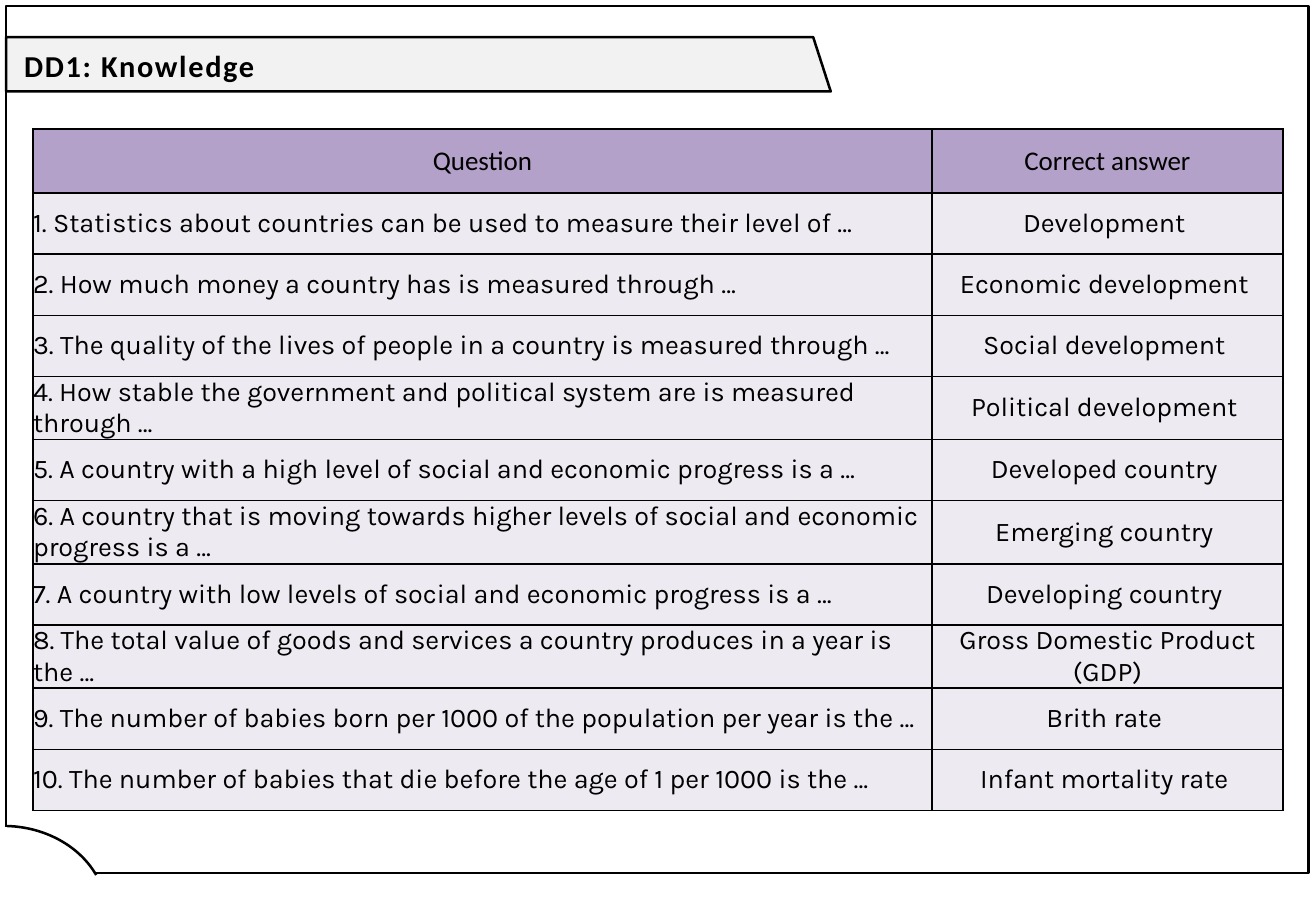
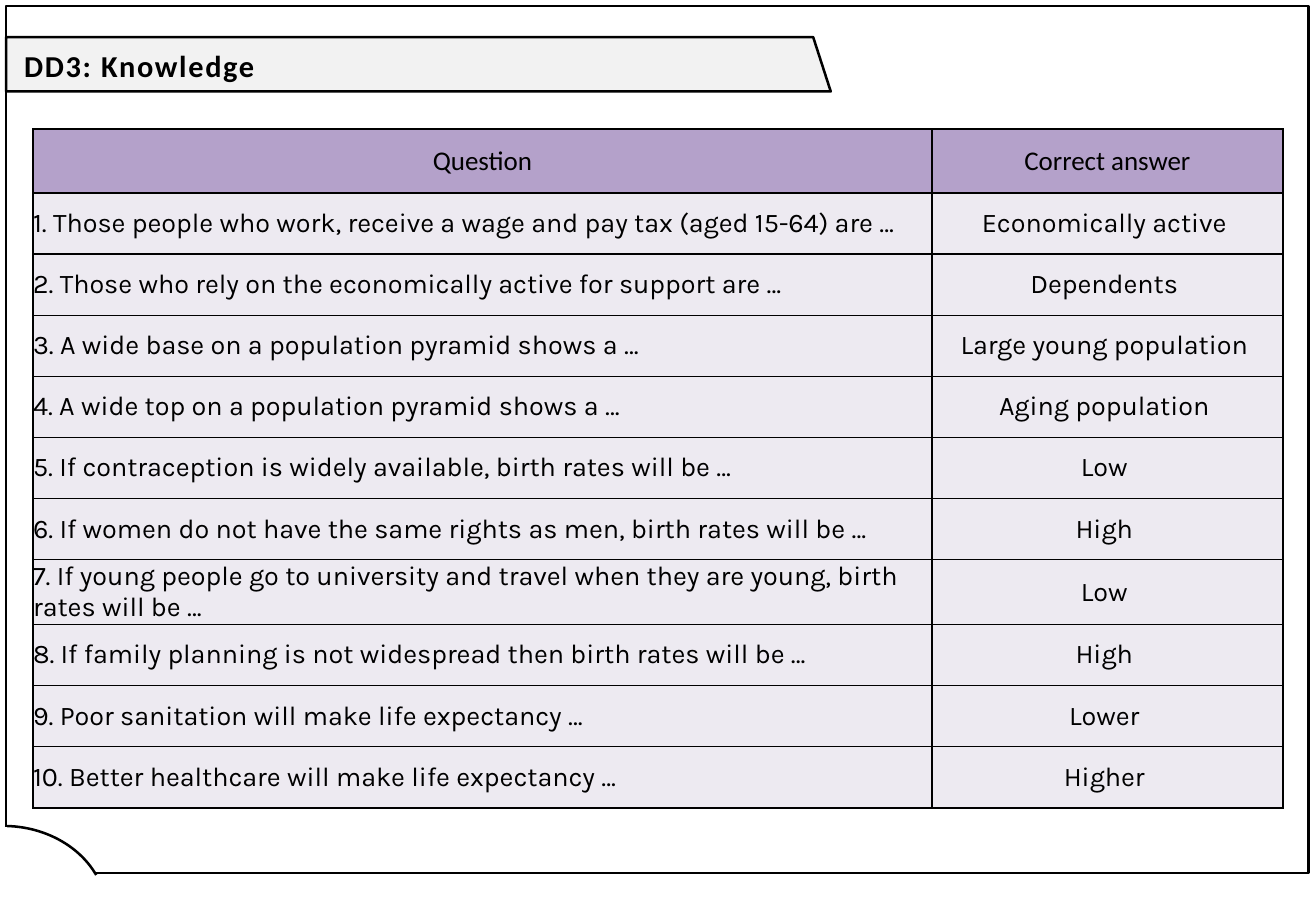
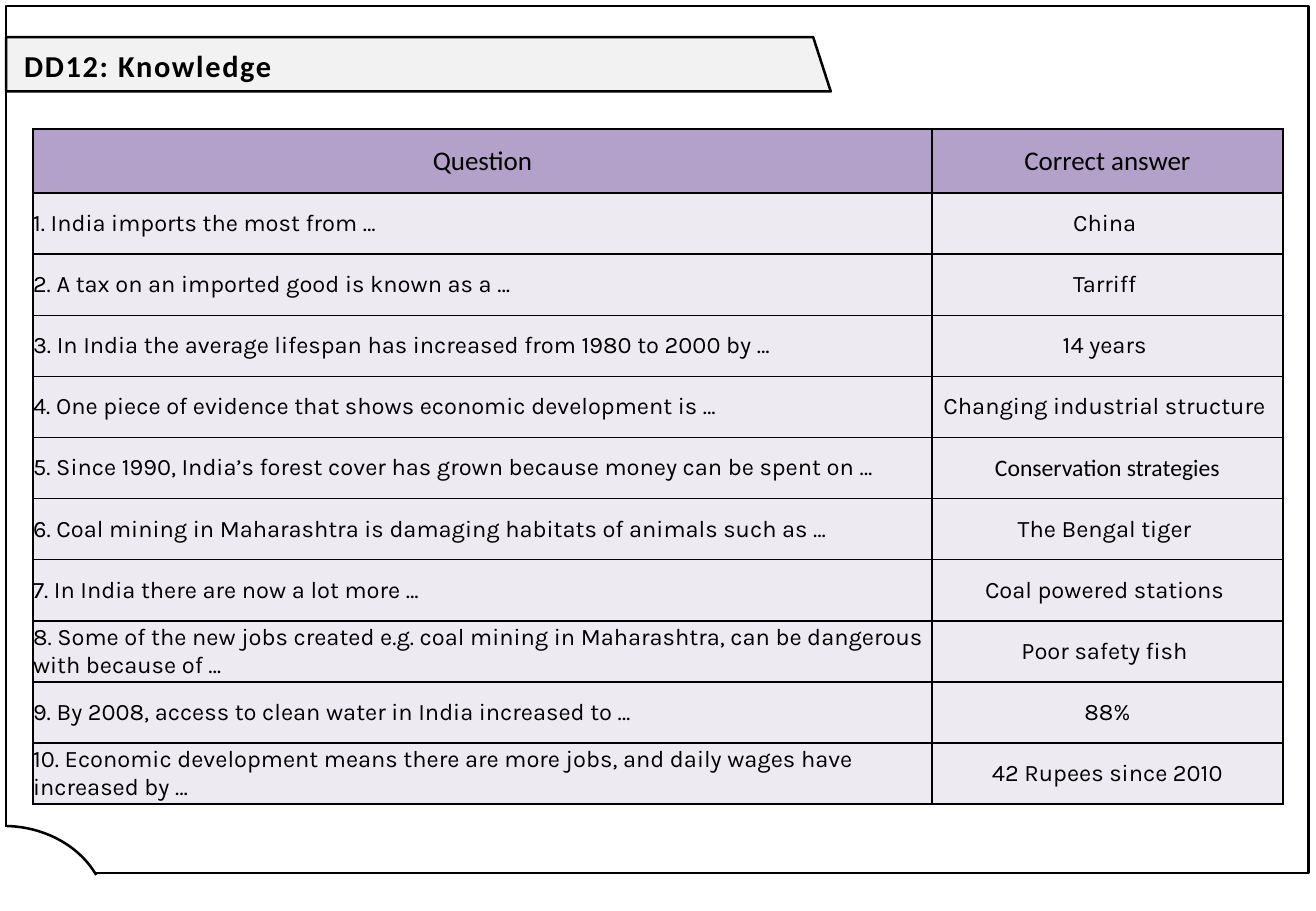
from dataclasses import dataclass

from lxml.etree import SubElement
from pptx import Presentation
from pptx.dml.color import RGBColor
from pptx.enum.shapes import MSO_SHAPE as Preset
from pptx.enum.text import MSO_ANCHOR as Anchor, PP_ALIGN as Align
from pptx.oxml.ns import qn
from pptx.util import Pt


@dataclass(frozen=True)
class Theme:
    ink: str = "000000"
    paper: str = "FFFFFF"
    band: str = "F2F2F2"
    header: str = "B4A1CA"
    row: str = "EDEAF1"
    heading_font: str = "Calibri"
    body_font: str = "Karla"
    title_size: int = 18
    header_size: int = 16
    outline: float = 1.5
    grid: float = 1


THEME = Theme()
HEADERS = ("Question", "Correct answer")
COLUMN_WIDTHS = (532.8, 208.1)
HEADER_HEIGHT, ROW_HEIGHT = 37.9, 36.25
TABLE_LEFT, TABLE_TOP = 19.6, 76.5
BAND_POINTS = [(3.6, 22), (482, 22), (492.4, 54.2), (3.6, 54.2)]

QUIZZES = [
    ("DD1: Knowledge", 16, [
        ("Statistics about countries can be used to measure their level of …", "Development "),
        ("How much money a country has is measured through …", "Economic development "),
        ("The quality of the lives of people in a country is measured through …", "Social development "),
        ("How stable the government and political system are is measured through …", "Political development "),
        ("A country with a high level of social and economic progress is a …", "Developed country "),
        ("A country that is moving towards higher levels of social and economic progress is a …", "Emerging country "),
        ("A country with low levels of social and economic progress is a …", "Developing country "),
        ("The total value of goods and services a country produces in a year is the …", "Gross Domestic Product (GDP)"),
        ("The number of babies born per 1000 of the population per year is the …", "Brith rate "),
        ("The number of babies that die before the age of 1 per 1000 is the …", "Infant mortality rate "),
    ]),
    ("DD3: Knowledge", 16, [
        ("Those people who work, receive a wage and pay tax (aged 15-64) are …", "Economically active "),
        ("Those who rely on the economically active for support are …", "Dependents "),
        ("A wide base on a population pyramid shows a …", "Large young population "),
        ("A wide top on a population pyramid shows a …", "Aging population "),
        ("If contraception is widely available, birth rates will be …", "Low "),
        ("If women do not have the same rights as men, birth rates will be …", "High "),
        ("If young people go to university and travel when they are young, birth rates will be …", "Low "),
        ("If family planning is not widespread then birth rates will be …", "High "),
        ("Poor sanitation will make life expectancy …", "Lower "),
        ("Better healthcare will make life expectancy …", "Higher "),
    ]),
    ("DD12: Knowledge", 14, [
        ("India imports the most from …", "China "),
        ("A tax on an imported good is known as a …", "Tarriff "),
        ("In India the average lifespan has increased from 1980 to 2000 by …", "14 years "),
        ("One piece of evidence that shows economic development is …", "Changing industrial structure "),
        ("Since 1990, India’s forest cover has grown because money can be spent on …", "Conservation strategies",
         THEME.heading_font),
        ("Coal mining in Maharashtra is damaging habitats of animals such as …", "The Bengal tiger "),
        ("In India there are now a lot more …", "Coal powered stations "),
        ("Some of the new jobs created e.g. coal mining in Maharashtra, can be dangerous with because of …",
         "Poor safety fish "),
        ("By 2008, access to clean water in India increased to …", "88%"),
        ("Economic development means there are more jobs, and daily wages have increased by …",
         "42 Rupees since 2010"),
    ]),
]


def color(value):
    return RGBColor.from_string(value)


def paint(shape, fill=None, outlined=True):
    shape.shadow.inherit = False
    if fill:
        shape.fill.solid()
        shape.fill.fore_color.rgb = color(fill)
    else:
        shape.fill.background()
    if outlined:
        shape.line.color.rgb = color(THEME.ink)
        shape.line.width = Pt(THEME.outline)
    else:
        shape.line.fill.background()


def write(paragraph, text, size, face, bold=False):
    run = paragraph.add_run()
    run.text = text
    run.font.size = Pt(size)
    run.font.name = face
    run.font.bold = bold
    run.font.color.rgb = color(THEME.ink)
    return run


def add_frame(slide):
    corners = [(Pt(x), Pt(y)) for x, y in BAND_POINTS]
    builder = slide.shapes.build_freeform(*corners[0])
    builder.add_line_segments(corners[1:], close=True)
    paint(builder.convert_to_shape(), THEME.band)

    border = slide.shapes.add_shape(Preset.RECTANGLE, Pt(3.6), Pt(3.6), Pt(772), Pt(514))
    paint(border)
    corner = slide.shapes.add_shape(Preset.ARC, Pt(-59), Pt(489.6), Pt(122.4), Pt(104.4))
    corner.adjustments[0], corner.adjustments[1] = 162.53, 202.27
    paint(corner, THEME.paper)
    corner_cover = slide.shapes.add_shape(Preset.RECTANGLE, Pt(0.7), Pt(490.3), Pt(3.6), Pt(7.2))
    paint(corner_cover, THEME.paper, outlined=False)


def add_title(slide, title):
    box = slide.shapes.add_textbox(Pt(7.2), Pt(15.1), Pt(463), Pt(45.4))
    frame = box.text_frame
    frame.word_wrap = True
    frame.vertical_anchor = Anchor.MIDDLE
    paragraph = frame.paragraphs[0]
    paragraph.line_spacing = 1.07
    paragraph.space_after = Pt(8)
    run = write(paragraph, title, THEME.title_size, THEME.heading_font, bold=True)
    run._r.get_or_add_rPr().set("spc", "100")


def add_borders(cell):
    properties = cell._tc.get_or_add_tcPr()
    for side in ("lnL", "lnR", "lnT", "lnB"):
        edge = SubElement(properties, qn(f"a:{side}"), w=str(Pt(THEME.grid)))
        SubElement(SubElement(edge, qn("a:solidFill")), qn("a:srgbClr"), val=THEME.ink)


def fill_cell(cell, text, size, face, background, align):
    add_borders(cell)
    cell.fill.solid()
    cell.fill.fore_color.rgb = color(background)
    cell.margin_left = cell.margin_right = cell.margin_top = cell.margin_bottom = 0
    cell.vertical_anchor = Anchor.MIDDLE
    paragraph = cell.text_frame.paragraphs[0]
    paragraph.alignment = align
    write(paragraph, text, size, face)


def add_quiz(slide, size, items):
    heights = [HEADER_HEIGHT] + [ROW_HEIGHT] * len(items)
    table = slide.shapes.add_table(
        len(heights), len(HEADERS), Pt(TABLE_LEFT), Pt(TABLE_TOP),
        Pt(sum(COLUMN_WIDTHS)), Pt(sum(heights))).table
    table.first_row = table.horz_banding = False
    for column, width in zip(table.columns, COLUMN_WIDTHS):
        column.width = Pt(width)
    for row, height in zip(table.rows, heights):
        row.height = Pt(height)
    for index, header in enumerate(HEADERS):
        fill_cell(table.cell(0, index), header, THEME.header_size, THEME.heading_font,
                  THEME.header, Align.CENTER)
    for number, (question, answer, *answer_font) in enumerate(items, 1):
        fill_cell(table.cell(number, 0), f"{number}. {question}", size, THEME.body_font,
                  THEME.row, Align.LEFT)
        fill_cell(table.cell(number, 1), answer, size, (answer_font or [THEME.body_font])[0],
                  THEME.row, Align.CENTER)


def main():
    deck = Presentation()
    deck.slide_width, deck.slide_height = Pt(780), Pt(540)
    for title, size, items in QUIZZES:
        slide = deck.slides.add_slide(deck.slide_layouts[6])
        add_frame(slide)
        add_quiz(slide, size, items)
        add_title(slide, title)
    deck.save("out.pptx")


if __name__ == "__main__":
    main()
